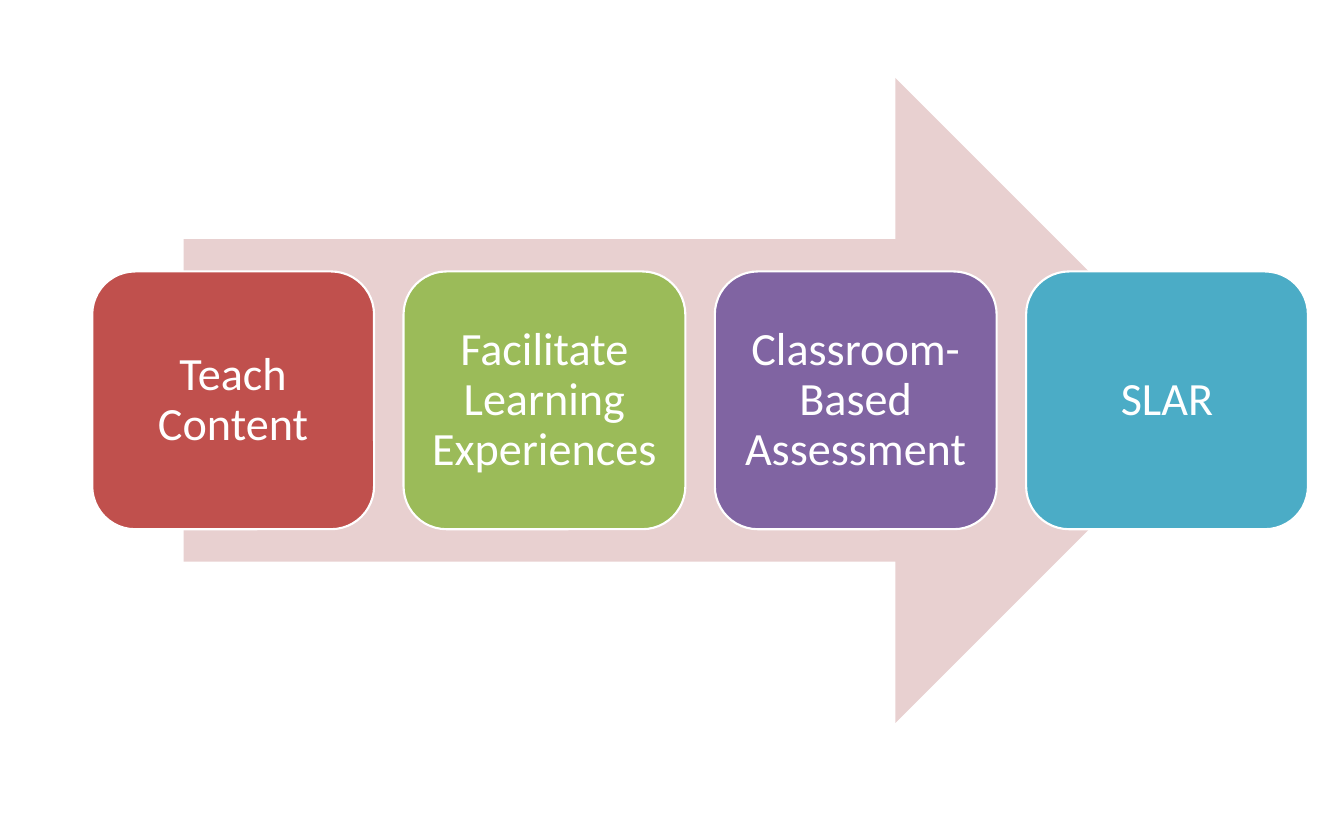
from pptx import Presentation
from pptx.dml.color import RGBColor
from pptx.enum.shapes import MSO_SHAPE
from pptx.enum.text import MSO_ANCHOR, PP_ALIGN
from pptx.util import Cm, Pt

RIGHT_ARROW = MSO_SHAPE.RIGHT_ARROW
ROUNDED = MSO_SHAPE.ROUNDED_RECTANGLE
MIDDLE = MSO_ANCHOR.MIDDLE
CENTER = PP_ALIGN.CENTER

WHITE = RGBColor(0xFF, 0xFF, 0xFF)
PINK = RGBColor(0xE8, 0xD0, 0xD0)
RED = RGBColor(0xC0, 0x50, 0x4D)
GREEN = RGBColor(0x9B, 0xBB, 0x59)
PURPLE = RGBColor(0x80, 0x64, 0xA2)
TEAL = RGBColor(0x4B, 0xAC, 0xC6)

STEPS = [
    ("Teach Content", RED),
    ("Facilitate Learning Experiences", GREEN),
    ("Classroom-Based Assessment", PURPLE),
    ("SLAR", TEAL),
]
STEP_LEFT, STEP_TOP = 3.1, 9.12
STEP_WIDTH, STEP_HEIGHT = 9.47, 8.66
STEP_PITCH = 10.46
INSET = Cm(0.46)

prs = Presentation()
prs.slide_width = Cm(45.16)
prs.slide_height = Cm(28.22)
s = prs.slides.add_slide(prs.slide_layouts[6])

arrow = s.shapes.add_shape(RIGHT_ARROW, Cm(6.17), Cm(2.62), Cm(34.75), Cm(21.67))
arrow.shadow.inherit = False
arrow.fill.solid()
arrow.fill.fore_color.rgb = PINK
arrow.line.fill.background()

for i, (label, color) in enumerate(STEPS):
    sp = s.shapes.add_shape(ROUNDED, Cm(STEP_LEFT + i * STEP_PITCH), Cm(STEP_TOP),
                            Cm(STEP_WIDTH), Cm(STEP_HEIGHT))
    sp.shadow.inherit = False
    sp.fill.solid()
    sp.fill.fore_color.rgb = color
    sp.line.color.rgb = WHITE
    sp.line.width = Pt(2)

    tf = sp.text_frame
    tf.word_wrap = True
    tf.vertical_anchor = MIDDLE
    tf.margin_left = tf.margin_right = tf.margin_top = tf.margin_bottom = INSET
    p = tf.paragraphs[0]
    p.text = label
    p.alignment = CENTER
    p.line_spacing = 0.9
    p.font.name = "Calibri"
    p.font.size = Pt(44)
    p.font.color.rgb = WHITE

prs.save("out.pptx")
